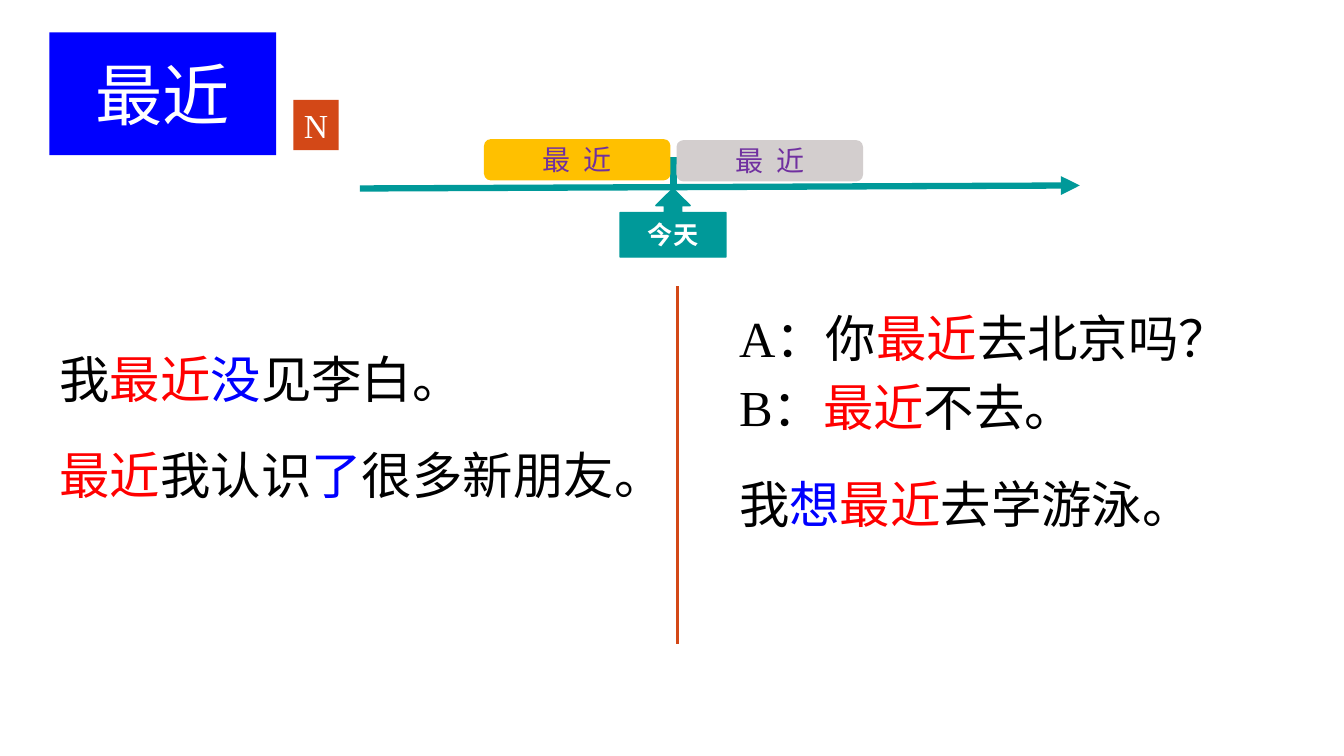
import pptx
import pptx.dml.color
import pptx.enum.shapes
import pptx.enum.text
import pptx.oxml
import pptx.oxml.ns
import pptx.util

Inches = pptx.util.Inches
Pt = pptx.util.Pt
RGBColor = pptx.dml.color.RGBColor
SHAPE = pptx.enum.shapes.MSO_SHAPE
ALIGN = pptx.enum.text.PP_ALIGN
ANCHOR = pptx.enum.text.MSO_ANCHOR
AUTO_SIZE = pptx.enum.text.MSO_AUTO_SIZE

BLACK = RGBColor(0x00, 0x00, 0x00)
WHITE = RGBColor(0xFF, 0xFF, 0xFF)
RED = RGBColor(0xFF, 0x00, 0x00)
BLUE = RGBColor(0x00, 0x00, 0xFF)
TEAL = RGBColor(0x00, 0x99, 0x99)
ORANGE = RGBColor(0xD3, 0x48, 0x17)
GOLD = RGBColor(0xFF, 0xC0, 0x00)
GREY = RGBColor(0xD3, 0xCE, 0xCE)
PURPLE = RGBColor(0x70, 0x30, 0xA0)

SANS = "Noto Sans CJK SC"
SERIF = "Times New Roman"

PAST_EXAMPLES = [
    ([("我", BLACK), ("最近", RED), ("没", BLUE), ("见李白。", BLACK)],
     {"line_spacing": 1.6}),
    ([("最近", RED), ("我认识", BLACK), ("了", BLUE), ("很多新朋友。", BLACK)],
     {"line_spacing": 1.6}),
]
FUTURE_EXAMPLES = [
    ([("A：你", BLACK), ("最近", RED), ("去北京吗？", BLACK)],
     {"line_spacing": 1.0, "space_after": Pt(6)}),
    ([("B：", BLACK), ("最近", RED), ("不去。", BLACK)], {"line_spacing": 1.0}),
    ([("我", BLACK), ("想", BLUE), ("最近", RED), ("去学游泳。", BLACK)],
     {"line_spacing": 1.6}),
]


def set_attributes(target, values):
    for name, value in values.items():
        setattr(target, name, value)


def place(shape, left, top, width, height):
    lengths = {"left": left, "top": top, "width": width, "height": height}
    set_attributes(shape, {name: Inches(value) for name, value in lengths.items()})


def add_run(paragraph, text, color, size, font=SANS, bold=False):
    run = paragraph.add_run()
    run.text = text
    set_attributes(run.font, {"name": font, "size": Pt(size), "bold": bold})
    run.font.color.rgb = color
    east_asian = pptx.oxml.parse_xml(
        f'<a:ea {pptx.oxml.ns.nsdecls("a")} typeface="{SANS}"/>')
    run.font._element.find(pptx.oxml.ns.qn("a:latin")).addnext(east_asian)
    return run


def add_label(slide, kind, box, fill, text, color, size, font=SANS, bold=False):
    shape = slide.shapes.add_shape(kind, *(Inches(value) for value in box))
    shape.shadow.inherit = False
    shape.fill.solid()
    shape.fill.fore_color.rgb = fill
    shape.line.fill.background()
    shape.text_frame.vertical_anchor = ANCHOR.MIDDLE
    paragraph = shape.text_frame.paragraphs[0]
    paragraph.alignment = ALIGN.CENTER
    return shape, add_run(paragraph, text, color, size, font, bold)


def add_line(slide, start, end, color, width, arrow=False):
    ends = (Inches(value) for value in (*start, *end))
    line = slide.shapes.add_connector(pptx.enum.shapes.MSO_CONNECTOR.STRAIGHT, *ends)
    line.line.color.rgb = color
    line.line.width = Pt(width)
    namespace = pptx.oxml.ns.nsdecls("a")
    if arrow:
        line.line._get_or_add_ln().append(
            pptx.oxml.parse_xml(f'<a:tailEnd {namespace} type="triangle"/>'))
    line._element.spPr.append(pptx.oxml.parse_xml(f"<a:effectLst {namespace}/>"))


def build_heading(slide, left, top):
    # Keyword in an oval title
    title = slide.shapes.title
    place(title, left, top, 2.25, 1.22)
    title._element.spPr.append(pptx.oxml.parse_xml(
        f'<a:prstGeom {pptx.oxml.ns.nsdecls("a")} prst="ellipse"><a:avLst/></a:prstGeom>'))
    title.fill.solid()
    title.fill.fore_color.rgb = BLUE
    set_attributes(title.text_frame, {"vertical_anchor": ANCHOR.MIDDLE,
                                      "auto_size": AUTO_SIZE.NONE})
    paragraph = title.text_frame.paragraphs[0]
    paragraph.alignment = ALIGN.CENTER
    add_run(paragraph, "最近", WHITE, 48)

    # Part of speech
    noun, _ = add_label(slide, SHAPE.RECTANGLE, (left + 2.42, top + 0.67, 0.45, 0.5),
                        ORANGE, "N", WHITE, 24, SERIF)
    noun.text_frame.word_wrap = False


def build_timeline(slide, left, top, width):
    today = left + 3.11
    # Axis and today's mark
    add_line(slide, (today, top + 0.18), (today, top + 0.45), TEAL, 4.5)
    add_line(slide, (left, top + 0.49), (left + width, top + 0.46), TEAL, 4.5, arrow=True)
    callout, _ = add_label(slide, SHAPE.UP_ARROW_CALLOUT,
                           (today - 0.53, top + 0.49, 1.05, 0.68),
                           TEAL, "今天", WHITE, 18, bold=True)
    callout.line.color.rgb = TEAL
    callout.line.width = Pt(1)

    # Recent past and near future
    for offset, drop, fill in ((-1.88, 0, GOLD), (0.03, 0.01, GREY)):
        _, run = add_label(slide, SHAPE.ROUNDED_RECTANGLE,
                           (today + offset, top + drop, 1.85, 0.41),
                           fill, "最 近", PURPLE, 20)
        run.font._element.set("spc", "225")


def build_examples(placeholder, box, sentences):
    place(placeholder, *box)
    frame = placeholder.text_frame
    set_attributes(frame, {"word_wrap": True, "auto_size": AUTO_SIZE.NONE,
                           "vertical_anchor": ANCHOR.TOP})
    for index, (parts, spacing) in enumerate(sentences):
        paragraph = frame.add_paragraph() if index else frame.paragraphs[0]
        set_attributes(paragraph, {"alignment": ALIGN.LEFT, "space_before": Pt(0),
                                   "space_after": Pt(0), **spacing})
        properties = paragraph._p.get_or_add_pPr()
        properties.set("marL", "0")
        properties.set("indent", "0")
        properties.append(pptx.oxml.parse_xml(
            f'<a:buNone {pptx.oxml.ns.nsdecls("a")}/>'))
        for text, color in parts:
            add_run(paragraph, text, color, 36, SERIF)


def main():
    presentation = pptx.Presentation()
    presentation.slide_width = Inches(13.33)
    presentation.slide_height = Inches(7.5)
    slide = presentation.slides.add_slide(
        presentation.slide_layouts.get_by_name("Two Content"))

    build_heading(slide, 0.49, 0.32)
    build_timeline(slide, 3.57, 1.38, 7.14)
    build_examples(slide.placeholders[1], (0.49, 3.04, 6.1, 1.91), PAST_EXAMPLES)
    build_examples(slide.placeholders[2], (7.23, 3, 6.1, 2.24), FUTURE_EXAMPLES)

    # Divider between the example columns
    add_line(slide, (6.72, 2.84), (6.72, 6.39), ORANGE, 2)

    presentation.save("out.pptx")


if __name__ == "__main__":
    main()
